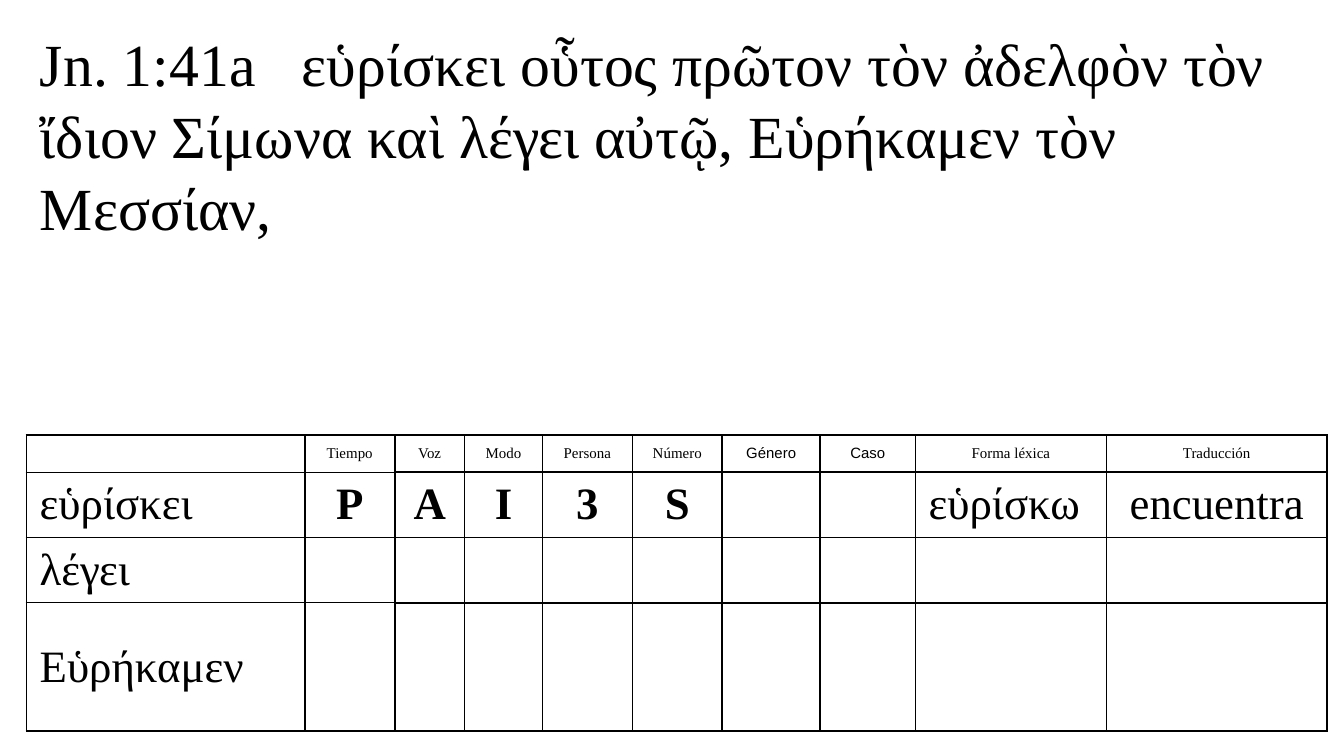
from lxml import etree
from pptx import Presentation
from pptx import util as u
from pptx.dml.color import RGBColor
from pptx.enum import text
from pptx.oxml import ns

COLORS = {"ink": "000000"}
INK = RGBColor.from_string(COLORS["ink"])
SERIF, SANS = "Times New Roman", "Arial"
COLUMN_WIDTHS = [5.26, 1.7, 1.32, 1.47, 1.7, 1.7, 1.85, 1.8, 3.61, 4.17]
ROW_HEIGHTS = [0.7, 1.21, 1.21, 2.42]
PARSING = [
    ["", "Tiempo", "Voz", "Modo", "Persona", "Número", "Género", "Caso",
     "Forma léxica", "Traducción"],
    ["εὑρίσκει", "P", "A", "I", "3", "S", "", "", "εὑρίσκω", "encuentra"],
    ["λέγει"] + [""] * 9,
    ["Εὑρήκαμεν"] + [""] * 9,
]


def add_border(cell, side, points):
    line = etree.SubElement(cell._tc.get_or_add_tcPr(), ns.qn(f"a:ln{side}"),
                            w=str(int(u.Pt(points))))
    fill = etree.SubElement(line, ns.qn("a:solidFill"))
    etree.SubElement(fill, ns.qn("a:srgbClr"), val=COLORS["ink"])


def apply(target, values):
    for name, value in values.items():
        setattr(target, name, value)


prs = Presentation()
apply(prs, {"slide_width": u.Cm(25.4), "slide_height": u.Cm(14.28)})
slide = prs.slides.add_slide(prs.slide_layouts[5])

# Verse, with a tab stop between the reference and the Greek text
verse = slide.shapes.title
apply(verse, {"left": u.Cm(0.5), "top": u.Cm(0.38),
              "width": u.Cm(24.41), "height": u.Cm(4.37)})
apply(verse.text_frame, {"word_wrap": True,
                         "auto_size": text.MSO_AUTO_SIZE.NONE,
                         "vertical_anchor": text.MSO_ANCHOR.TOP})
verse_line = verse.text_frame.paragraphs[0]
verse_line.alignment = text.PP_ALIGN.LEFT
verse_run = verse_line.add_run()
verse_run.text = ("Jn. 1:41a\tεὑρίσκει οὗτος πρῶτον τὸν ἀδελφὸν τὸν ἴδιον "
                  "Σίμωνα καὶ λέγει αὐτῷ, Εὑρήκαμεν τὸν Μεσσίαν,")
apply(verse_run.font, {"name": SERIF, "size": u.Pt(32)})
verse_run.font.color.rgb = INK
tabs = etree.SubElement(verse_line._p.get_or_add_pPr(), ns.qn("a:tabLst"))
etree.SubElement(tabs, ns.qn("a:tab"), pos=str(int(u.Cm(4.95))), algn="l")

# Parsing table
parsing_table = slide.shapes.add_table(
    len(ROW_HEIGHTS), len(COLUMN_WIDTHS), u.Cm(0.5), u.Cm(8.22),
    u.Cm(sum(COLUMN_WIDTHS)), u.Cm(sum(ROW_HEIGHTS))).table
apply(parsing_table, {"first_row": False, "horz_banding": False})
for column, width in zip(parsing_table.columns, COLUMN_WIDTHS):
    column.width = u.Cm(width)
for row, height in zip(parsing_table.rows, ROW_HEIGHTS):
    row.height = u.Cm(height)

last_row = len(PARSING) - 1
for r, words in enumerate(PARSING):
    for c, word in enumerate(words):
        cell = parsing_table.cell(r, c)
        apply(cell, {"vertical_anchor": text.MSO_ANCHOR.MIDDLE,
                     "margin_left": u.Cm(0.25), "margin_right": u.Cm(0.25),
                     "margin_top": u.Cm(0.1), "margin_bottom": u.Cm(0.1)})

        # Inner rules of the first two columns are thinner
        inner = 0.75 if c < 2 else 1
        for side, points in {"L": 1, "R": 1, "T": inner if r else 1,
                             "B": inner if r < last_row else 1}.items():
            add_border(cell, side, points)
        cell.fill.background()

        # Lexical forms in the body stand left, the rest is centred
        size = 24 if r else 8
        entry = cell.text_frame.paragraphs[0]
        lexical = r > 0 and c in (0, 8)
        entry.alignment = text.PP_ALIGN.LEFT if lexical else text.PP_ALIGN.CENTER
        if word:
            run = entry.add_run()
            run.text = word
            apply(run.font, {"name": SANS if word in ("Género", "Caso") else SERIF,
                             "size": u.Pt(size), "bold": r > 0 and 1 <= c <= 5})
            run.font.color.rgb = INK
        else:
            etree.SubElement(entry._p, ns.qn("a:endParaRPr"), sz=str(size * 100))

prs.save("out.pptx")
